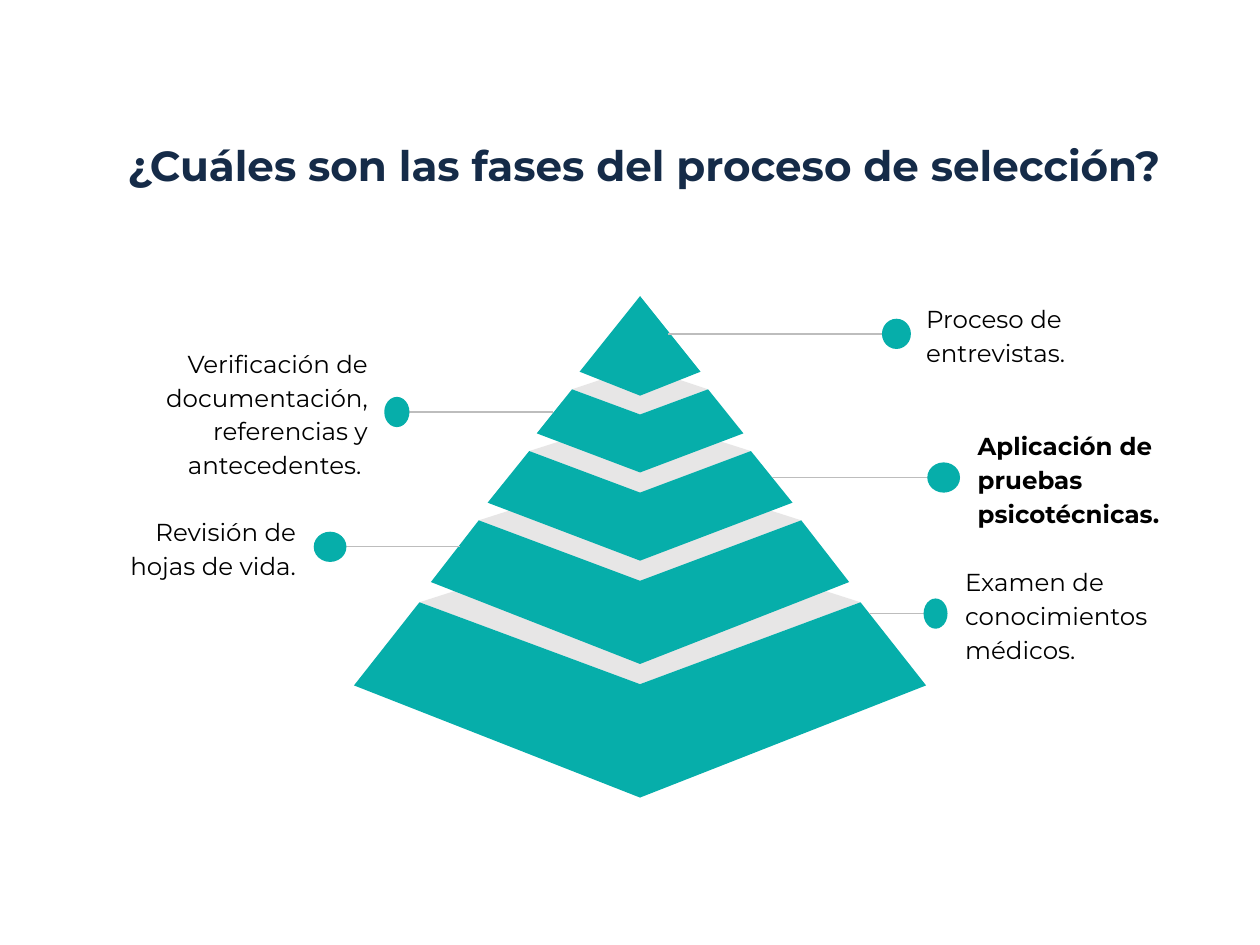
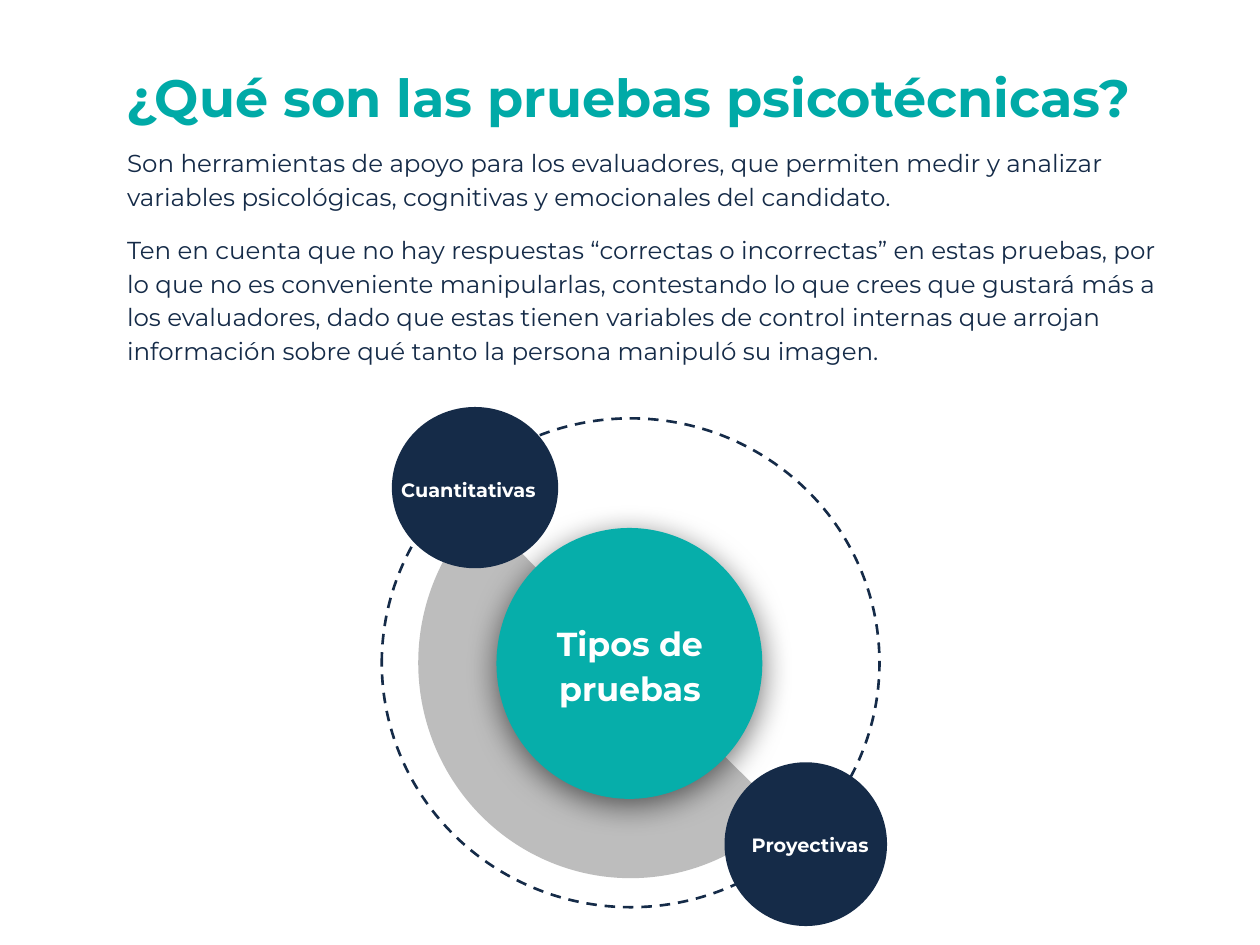
from lxml.etree import SubElement as Sub
from pptx import Presentation
from pptx.dml.color import RGBColor
from pptx.enum.dml import MSO_LINE_DASH_STYLE as Dash
from pptx.enum.shapes import MSO_CONNECTOR as Link, MSO_SHAPE as Form
from pptx.enum.text import MSO_ANCHOR as Anchor, PP_ALIGN as Align
from pptx.oxml.ns import qn
from pptx.util import Inches, Pt

COLS, ROWS = 100, 75
WIDE, HIGH = Inches(10), Inches(7.5)
FONT = "Montserrat"
TEAL, TITLE, NAVY = "06AEAA", "00AAA7", "152B48"
GREY, PALE, BLACK, WHITE = "BDBDBD", "E7E6E6", "000000", "FFFFFF"
AXIS = 50.8

# columns from the axis and rows: top edge, top notch, foot edge, foot tip, lid peak
TIERS = [
    (0, 23.5, 23.5, 4.8, 29.5, 31.4, None),
    (5.4, 30.9, 32.9, 8.2, 34.4, 37.5, 29.1),
    (8.8, 35.8, 39.1, 12.1, 39.9, 44.5, 33),
    (12.8, 41.3, 46.1, 16.6, 46.2, 52.7, 37.2),
    (17.5, 47.8, 54.3, 22.7, 54.4, 63.3, 42.2),
]

# text, box left and width, line row, line start and end, dot left and width
STEPS = [
    ("Revisión de hojas de vida.", 6.9, 17.9, 43.4, 36.5, 25.5, 24.9, 2.6),
    ("Aplicación de pruebas psicotécnicas.", 76.3, 23.7, 37.9, 61.3, 75.8, 73.6, 2.6),
    ("Proceso de entrevistas.", 72.2, 24.3, 26.5, 53, 71.9, 70, 2.3),
    ("Verificación de documentación, referencias y antecedentes. ",
     5, 25.5, 32.7, 43.9, 31, 30.5, 2),
    ("Examen de conocimientos médicos.", 75.3, 23.5, 48.7, 69, 74.9, 73.3, 1.9),
]
BOLD = "Aplicación"

BODY = [
    "Son herramientas de apoyo para los evaluadores, que permiten medir y analizar "
    "variables psicológicas, cognitivas y emocionales del candidato.",
    "Ten en cuenta que no hay respuestas “correctas o incorrectas” en estas pruebas, "
    "por lo que no es conveniente manipularlas, contestando lo que crees que gustará "
    "más a los evaluadores, dado que estas tienen variables de control internas que "
    "arrojan información sobre qué tanto la persona manipuló su imagen.",
]


def col(n):
    """Turn grid columns into a length."""
    return round(WIDE * n / COLS)


def row(n):
    """Turn grid rows into a length."""
    return round(HIGH * n / ROWS)


def area(x, y, w, h):
    """Turn a grid box into lengths."""
    return col(x), row(y), col(w), row(h)


def paint(part, tint):
    """Give a fill or a font its solid colour."""
    if hasattr(part, "solid"):
        part.solid()
        part.fore_color.rgb = RGBColor.from_string(tint)
    else:
        part.color.rgb = RGBColor.from_string(tint)


def write(page, box, texts, size, tint, bold=False, align=Align.LEFT,
          anchor=Anchor.MIDDLE, pad=(0.13, 0.13), lead=1.15, gap=0):
    """Add a text box with one run per paragraph."""
    frame = page.shapes.add_textbox(*area(*box)).text_frame
    frame.word_wrap = True
    frame.vertical_anchor = anchor
    frame.margin_left = frame.margin_right = Inches(pad[0])
    frame.margin_top = frame.margin_bottom = Inches(pad[1])
    for i, text in enumerate(texts):
        para = frame.add_paragraph() if i else frame.paragraphs[0]
        para.alignment, para.line_spacing = align, lead
        if i:
            para.space_before = Pt(gap)
        run = para.add_run()
        run.text = text
        run.font.name, run.font.size, run.font.bold = FONT, Pt(size), bold
        paint(run.font, tint)


def head(page, box, text, size, tint, align=Align.LEFT, anchor=Anchor.TOP):
    """Add a slide title."""
    write(page, box, [text], size, tint, True, align, anchor, (0.1, 0.05), 0.9)


def draw(page, box, tint, form=Form.OVAL):
    """Add a flat filled shape."""
    shape = page.shapes.add_shape(form, *area(*box))
    shape.shadow.inherit = False
    shape.line.fill.background()
    paint(shape.fill, tint)
    return shape


def ring(page, box, tint):
    """Add a dashed outline circle."""
    shape = draw(page, box, tint)
    shape.fill.background()
    paint(shape.line, tint)
    shape.line.width = Pt(1.5)
    shape.line.dash_style = Dash.DASH


def glow(shape):
    """Add a soft shadow under a shape."""
    fx = shape._element.spPr.find(qn("a:effectLst"))
    cast = Sub(fx, qn("a:outerShdw"), blurRad=str(Pt(18)), dist=str(Pt(4)),
               dir="5400000", algn="bl", rotWithShape="0")
    tone = Sub(cast, qn("a:srgbClr"), val=BLACK)
    Sub(tone, qn("a:alpha"), val="55000")


def facet(page, dots, tint):
    """Add a filled polygon from grid points."""
    first, *rest = [(col(x), row(y)) for x, y in dots]
    path = page.shapes.build_freeform(*first)
    path.add_line_segments(rest, close=True)
    shape = path.convert_to_shape()
    shape.shadow.inherit = False
    shape.line.fill.background()
    paint(shape.fill, tint)


def tier(page, top, edge, notch, foot, base, tip, peak):
    """Add one pyramid tier with its lid and two faces."""
    if peak:
        facet(page, [(AXIS - top, edge), (AXIS, notch),
                     (AXIS + top, edge), (AXIS, peak)], PALE)
    for side in (-1, 1):
        facet(page, [(AXIS + side * top, edge), (AXIS, notch),
                     (AXIS, tip), (AXIS + side * foot, base)], TEAL)


def step(page, text, left, width, mid, start, end, dot, size):
    """Add a label with its dot and leader line."""
    line = page.shapes.add_connector(Link.STRAIGHT, col(start), row(mid),
                                     col(end), row(mid))
    paint(line.line, GREY)
    line.line.width = Pt(0.75)
    Sub(line._element.spPr, qn("a:effectLst"))
    align = Align.RIGHT if left < AXIS / 2 else Align.LEFT
    write(page, (left, mid - 4.55, width, 9.1), [text], 14, BLACK,
          text.startswith(BOLD), align)
    draw(page, (dot, mid - 1.2, size, 2.4), TEAL)


def phases(page):
    """Build the pyramid of selection phases."""
    head(page, (3.6, 6.7, 95, 13.3), "¿Cuáles son las fases del proceso de selección?",
         24, NAVY, Align.CENTER, Anchor.MIDDLE)
    for item in reversed(TIERS):
        tier(page, *item)
    for item in STEPS:
        step(page, *item)


def tests(page):
    """Build the text and wheel of test types."""
    head(page, (9.1, 5.2, 89, 5.5), "¿Qué son las pruebas psicotécnicas?", 30, TITLE)
    write(page, (9.1, 10.9, 84.9, 40.8), BODY, 14, NAVY, anchor=Anchor.TOP,
          pad=(0.1, 0.05), gap=11)
    ring(page, (30.3, 33.2, 39.5, 38.8), NAVY)
    wedge = draw(page, (33.2, 35.5, 33.7, 34.2), GREY, Form.PIE)
    for i, angle in enumerate((44.83, 225.18)):
        wedge.adjustments[i] = angle * 0.6
    glow(draw(page, (39.4, 41.9, 21.1, 21.5), TEAL))
    discs = [
        ((31.1, 32.3, 13.2, 12.8), (30.4, 34.3, 14, 8.8), "Cuantitativas "),
        ((57.5, 60.5, 12.9, 13), (57.5, 62.5, 13.6, 8.9), "Proyectivas"),
    ]
    write(page, (42.2, 47.7, 15.6, 9.8), ["Tipos de pruebas"], 19, WHITE, True,
          Align.CENTER)
    for disc, box, text in discs:
        draw(page, disc, NAVY)
        write(page, box, [text], 11, WHITE, True, Align.CENTER)


def main():
    """Build and save the deck."""
    deck = Presentation()
    deck.slide_width, deck.slide_height = WIDE, HIGH
    for build in (phases, tests):
        build(deck.slides.add_slide(deck.slide_layouts[6]))
    deck.save("out.pptx")


if __name__ == "__main__":
    main()
